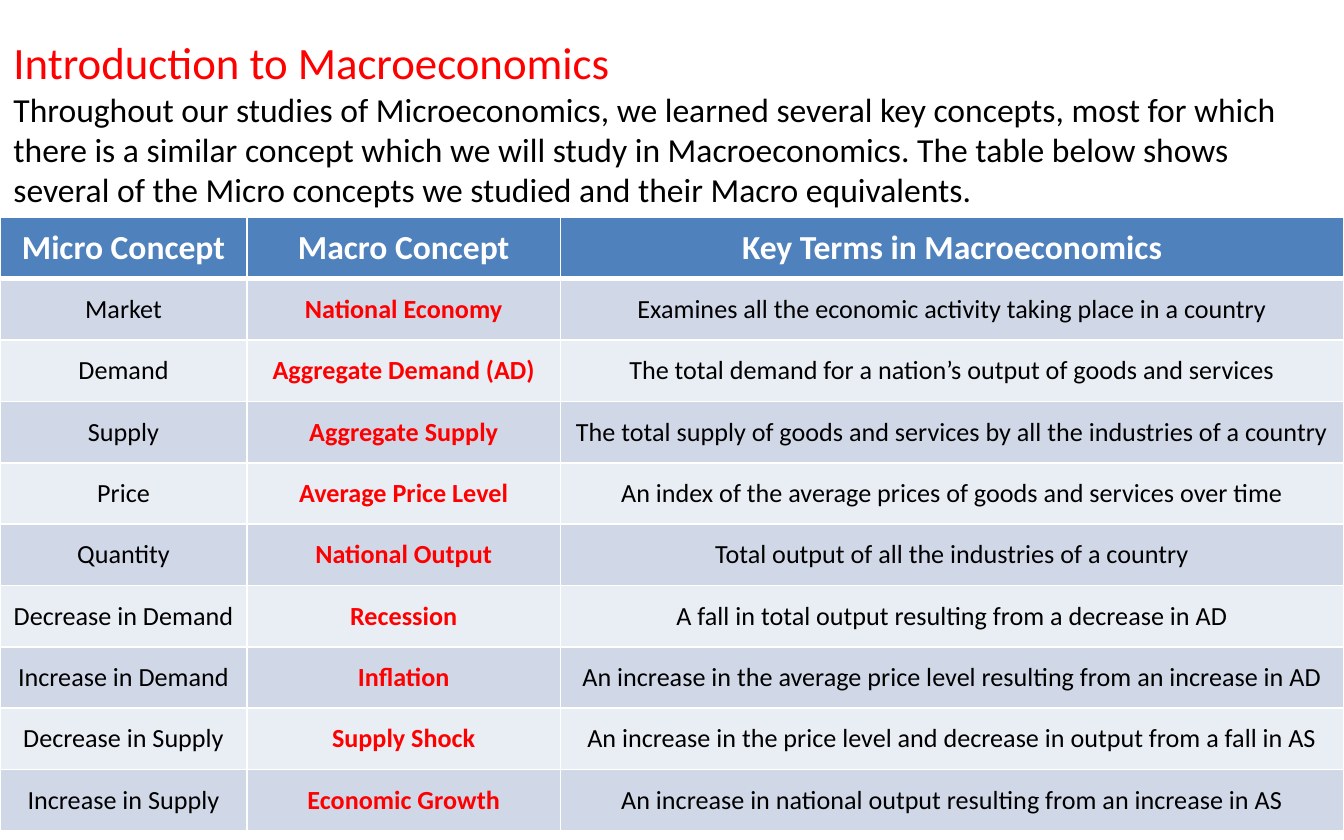
"""Build a slide pairing microeconomic concepts with their macroeconomic equivalents."""
from dataclasses import dataclass

from lxml.etree import SubElement
from pptx import Presentation
from pptx.dml.color import RGBColor
from pptx.enum.text import MSO_ANCHOR, MSO_AUTO_SIZE, PP_ALIGN
from pptx.oxml.ns import qn
from pptx.util import Cm, Pt


@dataclass(frozen=True)
class Theme:
    font: str = "Calibri"
    text: str = "000000"
    accent: str = "FF0000"
    white: str = "FFFFFF"
    header: str = "4F81BD"
    bands: tuple = ("D0D8E8", "E9EDF4")
    title_size: int = 24
    large_size: int = 18
    cell_size: int = 14
    thin_line: int = 1
    thick_line: int = 3


theme = Theme()

INTRODUCTION = (
    "Throughout our studies of Microeconomics, we learned several key concepts, "
    "most for which there is a similar concept which we will study in Macroeconomics. "
    "The table below shows several of the Micro concepts we studied and their Macro equivalents."
)
CONCEPTS = [
    ("Micro Concept", "Macro Concept", "Key Terms in Macroeconomics"),
    ("Market", "National Economy", "Examines all the economic activity taking place in a country"),
    ("Demand", "Aggregate Demand (AD)", "The total demand for a nation’s output of goods and services"),
    ("Supply", "Aggregate Supply",
     "The total supply of goods and services by all the industries of a country"),
    ("Price", "Average Price Level", "An index of the average prices of goods and services over time"),
    ("Quantity", "National Output", "Total output of all the industries of a country"),
    ("Decrease in Demand", "Recession", "A fall in total output resulting from a decrease in AD"),
    ("Increase in Demand", "Inflation",
     "An increase in the average price level resulting from an increase in AD"),
    ("Decrease in Supply", "Supply Shock",
     "An increase in the price level and decrease in output from a fall in AS"),
    ("Increase in Supply", "Economic Growth",
     "An increase in national output resulting from an increase in AS"),
]
COLUMN_WIDTHS = [Cm(4.67), Cm(5.92), Cm(14.81)]
ROW_HEIGHT = Cm(1.16)


def add_span(para, text, size, color, align, bold=False):
    para.alignment = align
    span = para.add_run()
    span.text = text
    span.font.name = theme.font
    span.font.size = Pt(size)
    span.font.bold = bold
    span.font.color.rgb = RGBColor.from_string(color)


def add_border(cell, side, width):
    line = SubElement(cell._tc.get_or_add_tcPr(), qn(f"a:ln{side}"), w=str(Pt(width)))
    fill = SubElement(line, qn("a:solidFill"))
    SubElement(fill, qn("a:srgbClr"), val=theme.white)


deck = Presentation()
deck.slide_width, deck.slide_height = Cm(25.4), Cm(15.88)
page = deck.slides.add_slide(deck.slide_layouts.get_by_name("Title Only"))

table = page.shapes.add_table(
    len(CONCEPTS), len(COLUMN_WIDTHS), Cm(0), Cm(4.11), sum(COLUMN_WIDTHS), ROW_HEIGHT * len(CONCEPTS)
).table
for column, width in zip(table.columns, COLUMN_WIDTHS):
    column.width = width

for row_index, concept in enumerate(CONCEPTS):
    is_header = row_index == 0
    for column_index, text in enumerate(concept):
        cell = table.cell(row_index, column_index)
        cell.vertical_anchor = MSO_ANCHOR.MIDDLE
        is_macro = column_index == 1
        if is_header:
            size, color, fill_color = theme.large_size, theme.white, theme.header
        else:
            size = theme.cell_size
            color = theme.accent if is_macro else theme.text
            fill_color = theme.bands[(row_index - 1) % 2]
        for side in "LRTB":
            below_header = (row_index, side) in ((0, "B"), (1, "T"))
            add_border(cell, side, theme.thick_line if below_header else theme.thin_line)
        cell.fill.solid()
        cell.fill.fore_color.rgb = RGBColor.from_string(fill_color)
        add_span(cell.text_frame.paragraphs[0], text, size, color, PP_ALIGN.CENTER, is_header or is_macro)

title = page.shapes.title
title.left, title.top, title.width, title.height = Cm(0), Cm(0.53), Cm(25.4), Cm(3.58)
frame = title.text_frame
frame.word_wrap = True
frame.auto_size = MSO_AUTO_SIZE.NONE
frame.vertical_anchor = MSO_ANCHOR.TOP
add_span(frame.paragraphs[0], "Introduction to Macroeconomics", theme.title_size, theme.accent, PP_ALIGN.LEFT)
add_span(frame.add_paragraph(), INTRODUCTION, theme.large_size, theme.text, PP_ALIGN.LEFT)

deck.save("out.pptx")
